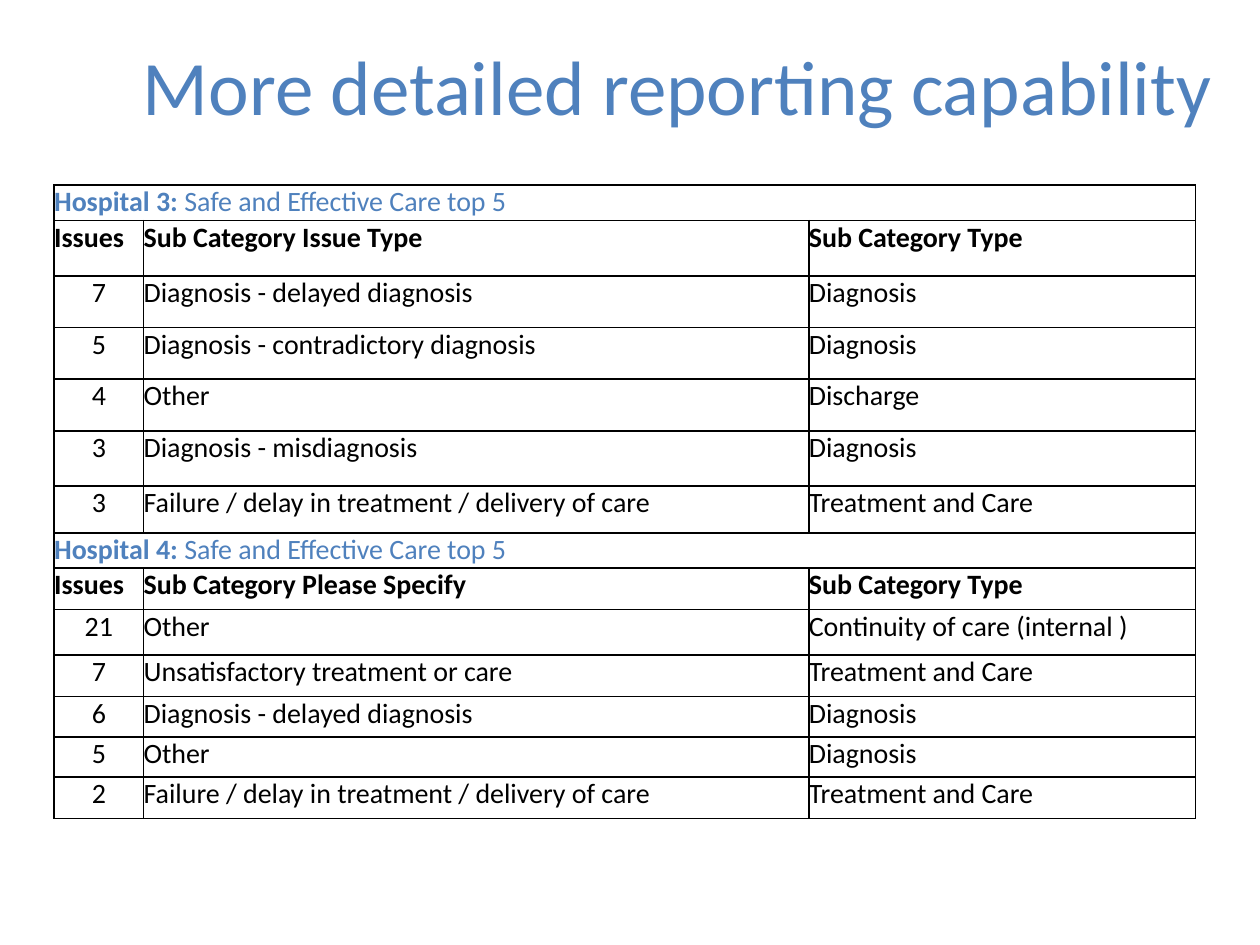
from dataclasses import dataclass

from lxml import etree
from pptx import Presentation
from pptx.dml.color import RGBColor
from pptx.enum.text import MSO_ANCHOR, PP_ALIGN
from pptx.oxml.ns import qn
from pptx.util import Inches, Pt

LEFT, CENTER = PP_ALIGN.LEFT, PP_ALIGN.CENTER
TOP, MIDDLE = MSO_ANCHOR.TOP, MSO_ANCHOR.MIDDLE


@dataclass(frozen=True)
class Theme:
    font: str = "Calibri"
    accent: str = "4F81BD"
    ink: str = "000000"
    title_size: int = 44
    table_size: int = 16
    border_width: int = 1


THEME = Theme()

COLUMN_WIDTHS = [0.71, 5.28, 3.07]

# Each section: hospital, column headings, issue rows, row heights
SECTIONS = [
    (
        "Hospital 3: ",
        ("Issues", "Sub Category Issue Type", "Sub Category Type"),
        [
            ("7", "Diagnosis - delayed diagnosis", "Diagnosis"),
            ("5", "Diagnosis - contradictory diagnosis", "Diagnosis"),
            ("4", "Other", "Discharge"),
            ("3", "Diagnosis - misdiagnosis", "Diagnosis"),
            ("3", "Failure / delay in treatment / delivery of care", "Treatment and Care"),
        ],
        [0.28, 0.44, 0.41, 0.41, 0.41, 0.44, 0.37],
    ),
    (
        "Hospital 4: ",
        ("Issues", "Sub Category Please Specify", "Sub Category Type"),
        [
            ("21", "Other", "Continuity of care (internal )"),
            ("7", "Unsatisfactory treatment or care", "Treatment and Care"),
            ("6", "Diagnosis - delayed diagnosis", "Diagnosis"),
            ("5", "Other", "Diagnosis"),
            ("2", "Failure / delay in treatment / delivery of care", "Treatment and Care"),
        ],
        [0.28, 0.33, 0.36, 0.33, 0.32, 0.32, 0.33],
    ),
]


def add_run(paragraph, text, size, color, bold=False):
    run = paragraph.add_run()
    run.text = text
    run.font.name = THEME.font
    run.font.size = Pt(size)
    run.font.bold = bold
    run.font.color.rgb = RGBColor.from_string(color)


def add_title(slide, text):
    title = slide.shapes.add_textbox(Inches(0.88), Inches(0.05), Inches(9), Inches(1.25))
    frame = title.text_frame
    frame.word_wrap = True
    frame.vertical_anchor = MIDDLE
    paragraph = frame.paragraphs[0]
    paragraph.alignment = CENTER
    add_run(paragraph, text, THEME.title_size, THEME.accent)


def style_cell(cell):
    cell.margin_left = cell.margin_right = cell.margin_top = cell.margin_bottom = 0
    cell.vertical_anchor = TOP
    properties = cell._tc.get_or_add_tcPr()
    # Borders have to come before the fill in the cell properties
    for side in ("a:lnL", "a:lnR", "a:lnT", "a:lnB"):
        line = etree.SubElement(properties, qn(side), w=str(Pt(THEME.border_width)))
        fill = etree.SubElement(line, qn("a:solidFill"))
        etree.SubElement(fill, qn("a:srgbClr"), val=THEME.ink)
    cell.fill.background()


def write_cell(cell, runs, color, alignment=LEFT):
    paragraph = cell.text_frame.paragraphs[0]
    paragraph.alignment = alignment
    for text, bold in runs:
        add_run(paragraph, text, THEME.table_size, color, bold)


def fill_section(table, first_row, hospital, headings, issues):
    # Section heading across all columns
    heading = table.cell(first_row, 0)
    heading.merge(table.cell(first_row, len(COLUMN_WIDTHS) - 1))
    write_cell(heading, [(hospital, True), ("Safe and Effective Care top 5", False)], THEME.accent)

    # Column headings, then issue counts with their categories
    for row, values in enumerate([headings, *issues], first_row + 1):
        is_heading = values is headings
        for column, value in enumerate(values):
            alignment = CENTER if column == 0 and not is_heading else LEFT
            write_cell(table.cell(row, column), [(value, is_heading)], THEME.ink, alignment)


def add_issue_table(slide):
    row_heights = [height for section in SECTIONS for height in section[3]]
    table = slide.shapes.add_table(
        len(row_heights), len(COLUMN_WIDTHS), Inches(0.43), Inches(1.47),
        Inches(sum(COLUMN_WIDTHS)), Inches(sum(row_heights)),
    ).table
    table.first_row = table.horz_banding = False
    for column, width in zip(table.columns, COLUMN_WIDTHS):
        column.width = Inches(width)
    for row, height in zip(table.rows, row_heights):
        row.height = Inches(height)
    for cell in table.iter_cells():
        style_cell(cell)

    first_row = 0
    for hospital, headings, issues, heights in SECTIONS:
        fill_section(table, first_row, hospital, headings, issues)
        first_row += len(heights)


def main():
    presentation = Presentation()
    presentation.slide_width = Inches(10)
    presentation.slide_height = Inches(7.5)
    slide = presentation.slides.add_slide(presentation.slide_layouts[6])
    add_title(slide, "More detailed reporting capability")
    add_issue_table(slide)
    presentation.save("out.pptx")


if __name__ == "__main__":
    main()
